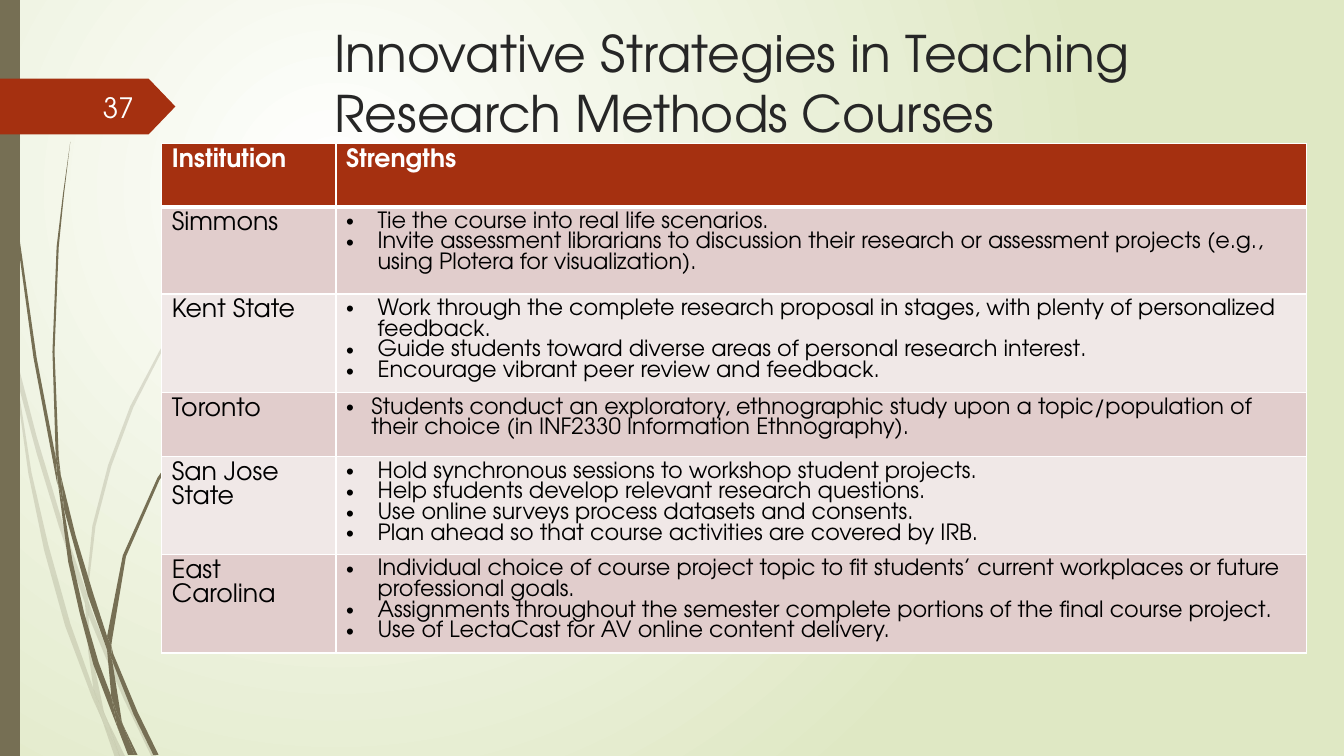
from lxml.etree import SubElement
from pptx import Presentation
from pptx.dml.color import RGBColor
from pptx.enum.shapes import MSO_SHAPE as Shape
from pptx.enum.text import MSO_ANCHOR as Anchor, PP_ALIGN as Align
from pptx.oxml.ns import qn
from pptx.util import Pt

PX = 9525
FONT = "TeX Gyre Adventor"
WHITE = RGBColor(0xFF, 0xFF, 0xFF)
NUMBER_WHITE = RGBColor(0xFE, 0xFF, 0xFF)
PALE_GREEN = RGBColor(0xDF, 0xE8, 0xC4)
OLIVE = RGBColor(0x76, 0x6F, 0x54)
RUST = RGBColor(0xA5, 0x30, 0x10)
CHARCOAL = RGBColor(0x26, 0x26, 0x26)
BLACK = RGBColor(0, 0, 0)
ROW_FILLS = [RGBColor(0xE1, 0xCD, 0xCC), RGBColor(0xF0, 0xE8, 0xE7)]

# Outlines of the grass blade segments
PALE_GRASS = [
    [(11, 336), (9, 309), (0, 271), (0, 287), (10, 330)],
    [(56, 501), (81, 575), (82, 563), (60, 499), (35, 416), (13, 331), (16, 361), (35, 432)],
    [(88, 583), (84, 572), (84, 586), (101, 627), (118, 666), (144, 720), (149, 720),
     (122, 664), (104, 624)],
    [(114, 720), (119, 720), (101, 683)],
    [(89, 656), (67, 594), (46, 519), (30, 450), (16, 361), (11, 336), (27, 451), (42, 524),
     (62, 596), (88, 665), (97, 685), (95, 679)],
    [(81, 575), (84, 620), (89, 656), (92, 664), (101, 683), (99, 678), (87, 620), (84, 584)],
    [(84, 561), (91, 501), (106, 444), (127, 388), (154, 335), (185, 284), (220, 235),
     (257, 190), (300, 148), (300, 147), (257, 189), (219, 234), (183, 283), (152, 334),
     (124, 387), (103, 443), (88, 501), (82, 561), (84, 572)],
    [(97, 685), (109, 720), (114, 720)],
    [(84, 584), (84, 572), (82, 563), (81, 575)],
    [(92, 664), (89, 656), (95, 679), (97, 685), (114, 720), (101, 683)],
]
DARK_GRASS = [
    [(7, 106), (16, 224), (32, 341), (54, 458), (55, 462), (53, 435), (35, 341), (18, 223),
     (8, 105), (5, 46), (4, 0), (3, 0), (4, 46)],
    [(84, 568), (102, 619), (102, 606), (89, 566), (72, 510), (58, 453), (61, 485)],
    [(108, 623), (106, 615), (107, 630), (127, 680), (146, 719), (151, 719), (131, 678)],
    [(106, 663), (94, 631), (80, 583), (69, 534), (61, 485), (55, 458), (65, 535), (76, 584),
     (89, 633), (107, 680), (112, 693), (111, 688)],
    [(58, 453), (56, 435), (52, 335), (56, 235), (61, 185), (67, 135), (60, 185), (54, 235),
     (50, 335), (53, 431)],
    [(128, 719), (131, 719), (117, 690)],
    [(55, 458), (61, 485), (58, 453), (53, 431), (53, 435)],
    [(107, 608), (120, 530), (152, 457), (197, 390), (222, 359), (250, 330), (222, 358),
     (196, 389), (150, 455), (117, 529), (102, 606), (106, 615)],
    [(112, 693), (122, 719), (126, 719)],
    [(102, 619), (106, 663), (111, 678), (117, 690), (116, 687), (107, 630), (105, 625)],
    [(102, 619), (105, 625), (107, 630), (106, 615), (102, 606)],
    [(111, 678), (106, 663), (111, 688), (112, 693), (125, 719), (128, 719), (117, 690)],
]

HEADINGS = ["Institution", "Strengths"]
COLUMN_WIDTHS = [166, 924]
ROW_HEIGHTS = [60, 83, 94, 61, 93, 94]
# Institution, bullet indent, strengths
INSTITUTIONS = [
    ("Simmons", 30, [
        "Tie the course into real life scenarios.",
        "Invite assessment librarians to discussion their research or assessment projects "
        "(e.g., using Plotera for visualization)."]),
    ("Kent State", 30, [
        "Work through the complete research proposal in stages, with plenty of personalized feedback.",
        "Guide students toward diverse areas of personal research interest.",
        "Encourage vibrant peer review and feedback."]),
    ("Toronto", 24, [
        "Students conduct an exploratory, ethnographic study upon a topic/population of "
        "their choice (in INF2330 Information Ethnography)."]),
    ("San Jose State", 30, [
        "Hold synchronous sessions to workshop student projects.",
        "Help students develop relevant research questions.",
        "Use online surveys process datasets and consents.",
        "Plan ahead so that course activities are covered by IRB."]),
    ("East Carolina", 30, [
        "Individual choice of course project topic to fit students’ current workplaces or "
        "future professional goals.",
        "Assignments throughout the semester complete portions of the final course project.",
        "Use of LectaCast for AV online content delivery."]),
]


def paint_background(slide):
    fill = slide.background.fill
    fill.gradient()
    for stop, color in zip(fill.gradient_stops, [WHITE, PALE_GREEN]):
        stop.color.rgb = color
    gradient = slide.element.find(".//" + qn("a:gradFill"))
    gradient.remove(gradient.find(qn("a:lin")))
    circle = SubElement(gradient, qn("a:path"), path="circle")
    SubElement(circle, qn("a:fillToRect"), l="50000", t="50000", r="100000", b="100000")


def paint_shape(shape, color):
    shape.shadow.inherit = False
    shape.fill.solid()
    shape.fill.fore_color.rgb = color
    shape.line.fill.background()


def add_grass(slide, outlines, opacity=100):
    for start, *points in outlines:
        builder = slide.shapes.build_freeform(*start, scale=PX)
        builder.add_line_segments(points)
        segment = builder.convert_to_shape()
        paint_shape(segment, OLIVE)
        if opacity < 100:
            color = segment.element.spPr.find(qn("a:solidFill"))[0]
            SubElement(color, qn("a:alpha"), val=str(opacity * 1000))


def add_block(slide, kind, left, top, width, height, color):
    block = slide.shapes.add_shape(kind, left * PX, top * PX, width * PX, height * PX)
    paint_shape(block, color)
    return block


def format_text(paragraph, size, color, bold=False):
    for run in paragraph.runs:
        run.font.name = FONT
        run.font.size = Pt(size)
        run.font.bold = bold
        run.font.color.rgb = color


def add_text(slide, text, left, top, width, height, size, color,
             align=Align.LEFT, anchor=Anchor.TOP):
    box = slide.shapes.add_textbox(left * PX, top * PX, width * PX, height * PX)
    box.text_frame.word_wrap = True
    box.text_frame.vertical_anchor = anchor
    box.text_frame.text = text
    paragraph = box.text_frame.paragraphs[0]
    paragraph.alignment = align
    format_text(paragraph, size, color)


def add_bullet(paragraph, indent):
    properties = paragraph._p.get_or_add_pPr()
    properties.set("marL", str(indent * PX))
    properties.set("indent", str(-indent * PX))
    SubElement(properties, qn("a:buFont"), typeface="Arial")
    SubElement(properties, qn("a:buChar"), char="•")


def style_cell(cell, color, top=1, bottom=1):
    properties = cell._tc.get_or_add_tcPr()
    for side, width in zip("LRTB", [1, 1, top, bottom]):
        border = SubElement(properties, qn(f"a:ln{side}"), w=str(Pt(width)))
        SubElement(SubElement(border, qn("a:solidFill")), qn("a:srgbClr"), val=str(WHITE))
    cell.fill.solid()
    cell.fill.fore_color.rgb = color


def fill_cell(cell, lines, size, spacing, color=BLACK, bold=False, indent=0):
    cell.text_frame.text = "\n".join(lines)
    for paragraph in cell.text_frame.paragraphs:
        if indent:
            add_bullet(paragraph, indent)
        paragraph.line_spacing = Pt(spacing)
        format_text(paragraph, size, color, bold)


def add_strengths_table(slide, left, top):
    table = slide.shapes.add_table(
        len(ROW_HEIGHTS), len(COLUMN_WIDTHS), left * PX, top * PX,
        sum(COLUMN_WIDTHS) * PX, sum(ROW_HEIGHTS) * PX).table
    for column, width in zip(table.columns, COLUMN_WIDTHS):
        column.width = width * PX
    for row, height in zip(table.rows, ROW_HEIGHTS):
        row.height = height * PX
    for cell, heading in zip(table.rows[0].cells, HEADINGS):
        style_cell(cell, RUST, bottom=3)
        fill_cell(cell, [heading], 18, 17, WHITE, bold=True)
    for index, (institution, indent, strengths) in enumerate(INSTITUTIONS):
        name_cell, strengths_cell = table.rows[index + 1].cells
        for cell in (name_cell, strengths_cell):
            style_cell(cell, ROW_FILLS[index % 2], top=1 if index else 3)
        fill_cell(name_cell, [institution], 18, 17)
        fill_cell(strengths_cell, strengths, 16, 14.8, indent=indent)


def main():
    presentation = Presentation()
    presentation.slide_width, presentation.slide_height = 1280 * PX, 720 * PX
    slide = presentation.slides.add_slide(presentation.slide_layouts[6])
    # Backdrop with grass and side bar
    paint_background(slide)
    add_grass(slide, PALE_GRASS, opacity=20)
    add_grass(slide, DARK_GRASS)
    add_block(slide, Shape.RECTANGLE, 0, 0, 19, 720, OLIVE)
    # Slide number tag
    tag = add_block(slide, Shape.PENTAGON, 0, 75, 167, 53, RUST)
    tag.adjustments[0] = 0.48
    # Title, table and number
    add_text(slide, "Innovative Strategies in Teaching Research Methods Courses",
             309, 16, 936, 134, 36, CHARCOAL)
    add_strengths_table(slide, 154, 137)
    add_text(slide, "37", 55, 83, 82, 38, 20, NUMBER_WHITE, Align.RIGHT, Anchor.MIDDLE)
    presentation.save("out.pptx")


if __name__ == "__main__":
    main()
